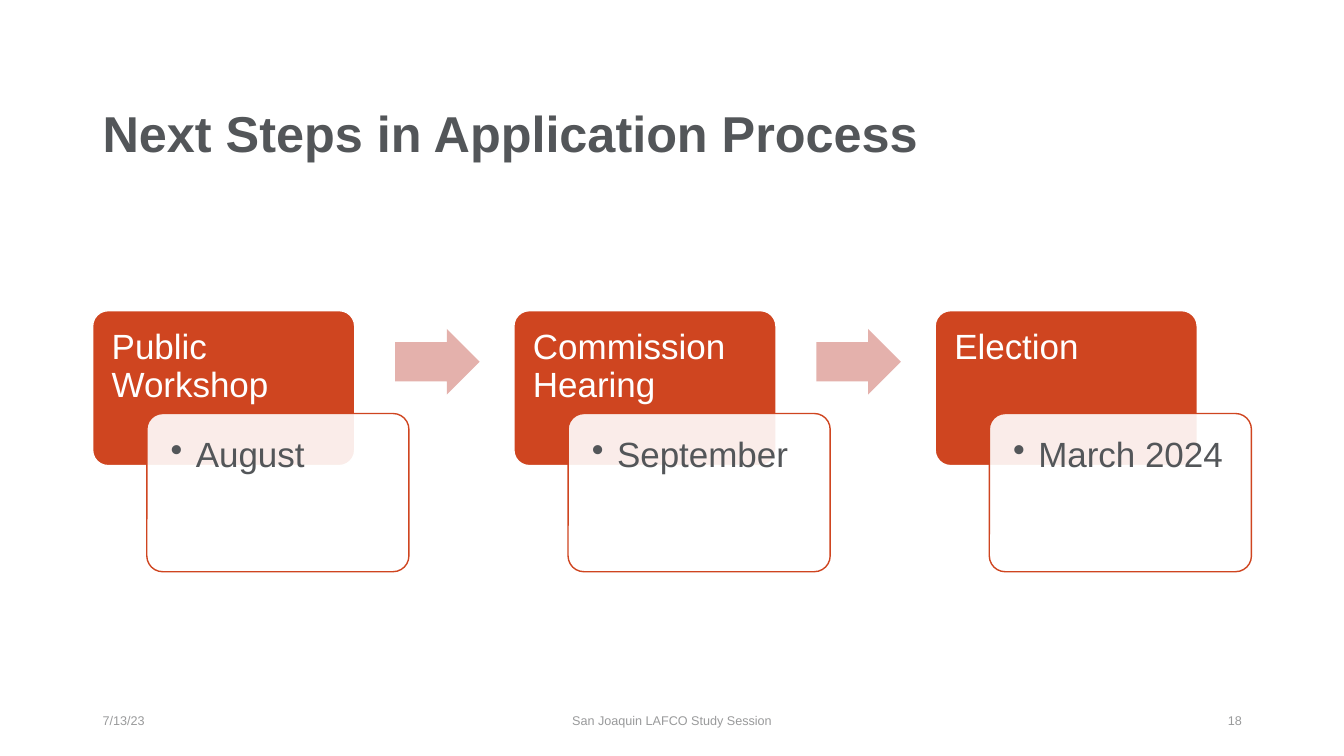
from dataclasses import dataclass
from typing import Optional

import lxml.etree
import pptx
import pptx.dml.color
import pptx.enum.shapes
import pptx.enum.text
import pptx.oxml.ns
import pptx.util

Pt = pptx.util.Pt
RGB = pptx.dml.color.RGBColor
Align = pptx.enum.text.PP_ALIGN
Anchor = pptx.enum.text.MSO_ANCHOR
Shape = pptx.enum.shapes.MSO_SHAPE
qn = pptx.oxml.ns.qn


@dataclass(frozen=True)
class Theme:
    font: str = "Arial"
    ink: RGB = RGB(0x53, 0x56, 0x59)
    accent: RGB = RGB(0xCF, 0x45, 0x20)
    arrow: RGB = RGB(0xE4, 0xB1, 0xAC)
    muted: RGB = RGB(0x99, 0x9A, 0x9B)
    white: RGB = RGB(0xFF, 0xFF, 0xFF)
    title_size: float = 36
    step_size: float = 25
    footer_size: float = 9


@dataclass(frozen=True)
class Box:
    left: float
    top: float
    width: float
    height: float

    def shifted(self, dx: float) -> "Box":
        return Box(self.left + dx, self.top, self.width, self.height)

    def lengths(self) -> tuple:
        return Pt(self.left), Pt(self.top), Pt(self.width), Pt(self.height)


@dataclass(frozen=True)
class Step:
    name: str
    date: str


@dataclass(frozen=True)
class Label:
    text: str
    box: Box
    size: float
    color: RGB
    align: Align = Align.LEFT
    bold: bool = False
    line_spacing: float = 1.0


THEME = Theme()
STEPS = (
    Step("Public Workshop", "August"),
    Step("Commission Hearing", "September"),
    Step("Election", "March 2024"),
)
STEP_PITCH = 300.9
NAME_CARD = Box(66.2, 221.9, 187.2, 110.7)
DATE_CARD = Box(104.9, 295.4, 187.2, 113)
ARROW = Box(282.2, 235, 60.4, 46.8)
BULLET_INDENT = 18

LABELS = (
    Label("Next Steps in Application Process", Box(66.2, 61.9, 828, 71.3),
          THEME.title_size, THEME.ink, bold=True, line_spacing=0.9),
    Label("7/13/23", Box(66.2, 500.5, 216, 28.8),
          THEME.footer_size, THEME.muted),
    Label("San Joaquin LAFCO Study Session", Box(318, 500.5, 324, 28.8),
          THEME.footer_size, THEME.muted, Align.CENTER),
    Label("18", Box(678.2, 500.5, 216, 28.8),
          THEME.footer_size, THEME.muted, Align.RIGHT),
)


def style_paragraph(paragraph, size: float, color: RGB, align: Align,
                    line_spacing: float, bold: bool = False) -> None:
    paragraph.alignment = align
    paragraph.line_spacing = line_spacing
    paragraph.font.name = THEME.font
    paragraph.font.size = Pt(size)
    paragraph.font.bold = bold
    paragraph.font.color.rgb = color


def add_label(slide, label: Label) -> None:
    frame = slide.shapes.add_textbox(*label.box.lengths()).text_frame
    frame.word_wrap = True
    frame.vertical_anchor = Anchor.MIDDLE
    frame.text = label.text
    style_paragraph(frame.paragraphs[0], label.size, label.color, label.align,
                    label.line_spacing, label.bold)


def add_filled(slide, kind: Shape, box: Box, fill: RGB, line: Optional[RGB],
               adjustments: tuple):
    shape = slide.shapes.add_shape(kind, *box.lengths())
    shape.shadow.inherit = False
    shape.fill.solid()
    shape.fill.fore_color.rgb = fill
    if line is None:
        shape.line.fill.background()
    else:
        shape.line.color.rgb = line
        shape.line.width = Pt(1)
    for index, value in enumerate(adjustments):
        shape.adjustments[index] = value
    return shape


def add_card(slide, box: Box, text: str, fill: RGB, line: RGB, ink: RGB,
             inset: float, bulleted: bool = False):
    card = add_filled(slide, Shape.ROUNDED_RECTANGLE, box, fill, line, (0.1,))
    frame = card.text_frame
    frame.word_wrap = True
    frame.vertical_anchor = Anchor.TOP
    frame.margin_left = frame.margin_top = frame.margin_right = Pt(inset)
    frame.margin_bottom = Pt(0)
    frame.text = text
    paragraph = frame.paragraphs[0]
    if bulleted:
        add_bullet(paragraph)
    style_paragraph(paragraph, THEME.step_size, ink, Align.LEFT, 0.9)
    return card


def add_bullet(paragraph) -> None:
    properties = paragraph._p.get_or_add_pPr()
    properties.set("marL", str(Pt(BULLET_INDENT)))
    properties.set("indent", str(-Pt(BULLET_INDENT)))
    lxml.etree.SubElement(properties, qn("a:buChar")).set("char", "•")


def set_opacity(shape, percent: int) -> None:
    color = shape._element.spPr.find(qn("a:solidFill"))[0]
    lxml.etree.SubElement(color, qn("a:alpha")).set("val", str(percent * 1000))


def add_step(slide, step: Step, dx: float, has_next: bool) -> None:
    """Draw the step's name card, its date card and the arrow to the next step."""
    add_card(slide, NAME_CARD.shifted(dx), step.name, THEME.accent,
             THEME.white, THEME.white, inset=10.4)
    date_card = add_card(slide, DATE_CARD.shifted(dx), step.date, THEME.white,
                         THEME.accent, THEME.ink, inset=13.7, bulleted=True)
    set_opacity(date_card, 90)
    if has_next:
        add_filled(slide, Shape.RIGHT_ARROW, ARROW.shifted(dx), THEME.arrow,
                   None, (0.6, 0.5))


def main() -> None:
    deck = pptx.Presentation()
    deck.slide_width, deck.slide_height = Pt(960), Pt(540)
    slide = deck.slides.add_slide(deck.slide_layouts[6])
    for index, step in enumerate(STEPS):
        add_step(slide, step, index * STEP_PITCH, index < len(STEPS) - 1)
    for label in LABELS:
        add_label(slide, label)
    deck.save("out.pptx")


if __name__ == "__main__":
    main()
